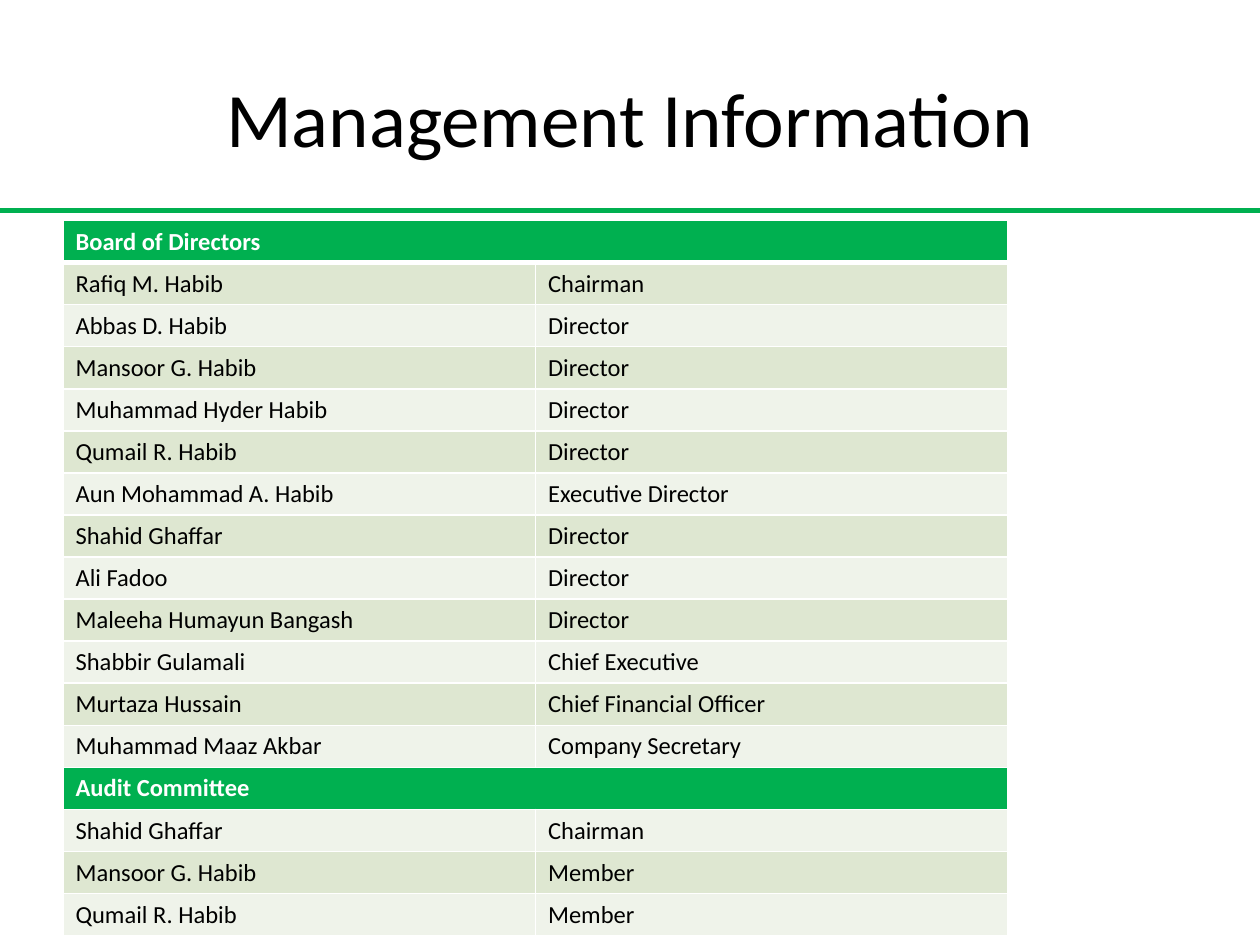
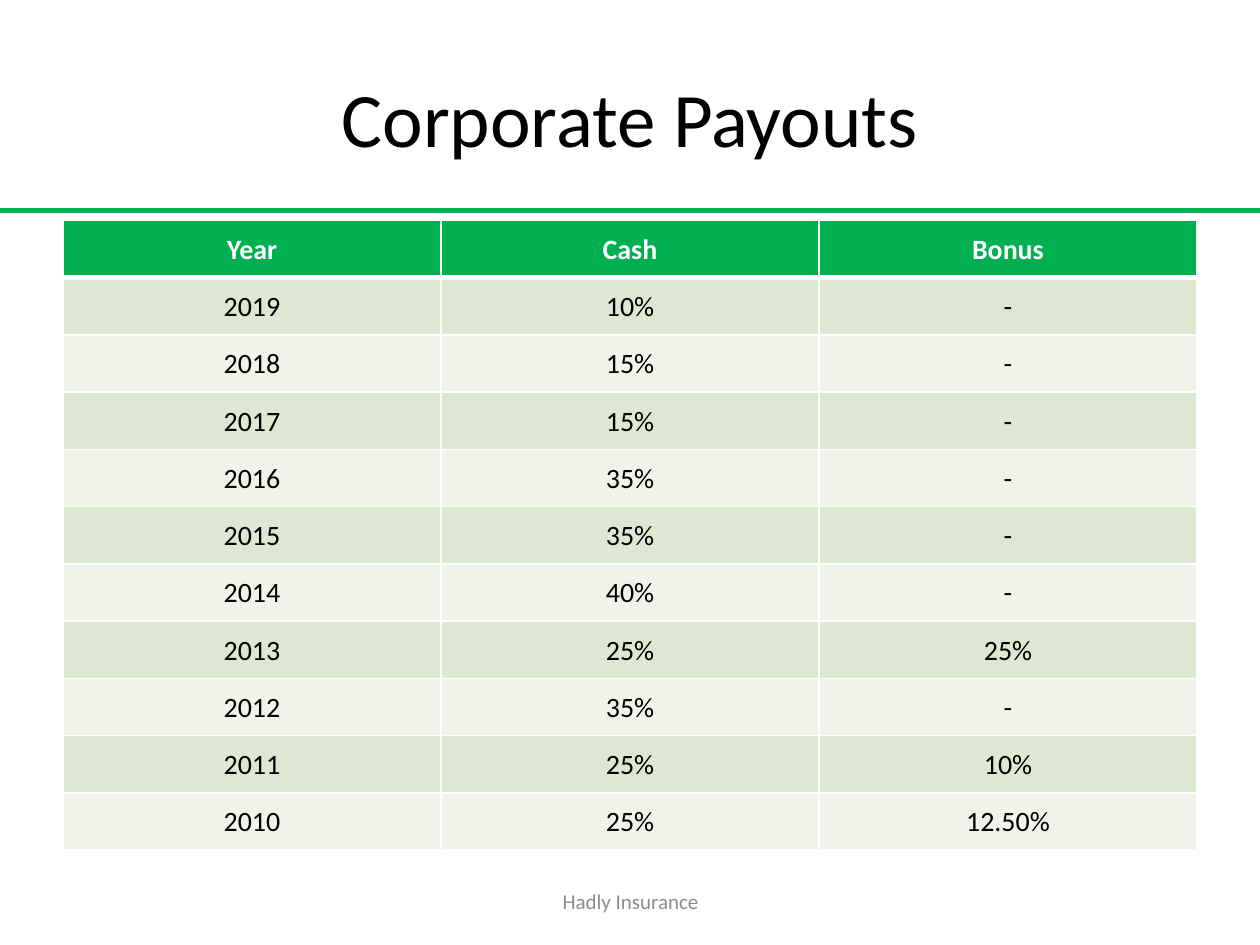
from dataclasses import dataclass
from typing import Optional

from lxml import etree
from pptx import Presentation, util as u
from pptx.dml.color import RGBColor
from pptx.enum import shapes, text
from pptx.oxml import ns

SCALE = u.Inches(1) // 100


@dataclass(frozen=True)
class Theme:
    """Colours, font and type sizes shared by the slides."""
    green: str = "00B050"
    band_dark: str = "DEE7D1"
    band_light: str = "EFF3EA"
    white: str = "FFFFFF"
    black: str = "000000"
    grey: str = "8C8C8C"
    font: str = "Calibri"
    title_size: int = 44
    footer_size: int = 12
    rule_width: int = 3
    border_width: int = 1
    header_border_width: int = 3


@dataclass(frozen=True)
class Box:
    """A rectangle in px, a hundred to the inch."""
    left: int
    top: int
    width: int
    height: int

    def emu(self) -> tuple[int, ...]:
        """Return the rectangle in EMU."""
        return tuple(px(v) for v in (self.left, self.top, self.width, self.height))


@dataclass(frozen=True)
class TableSpec:
    """A banded table; a row with one entry is a heading across all columns."""
    box: Box
    rows: list[tuple[str, ...]]
    size: int
    align: text.PP_ALIGN = text.PP_ALIGN.LEFT
    anchor: text.MSO_ANCHOR = text.MSO_ANCHOR.TOP
    margins: Optional[tuple[int, int, int, int]] = None


@dataclass(frozen=True)
class SlideSpec:
    """The title, table and optional footer of one slide."""
    title: str
    table: TableSpec
    footer: str = ""


THEME = Theme()
PAGE = Box(0, 0, 1000, 750)
TITLE_BOX = Box(50, 30, 900, 125)
FOOTER_BOX = Box(342, 695, 317, 40)
RULE_TOP = 167

MANAGEMENT = [
    ("Board of Directors",),
    ("Rafiq M. Habib", "Chairman"),
    ("Abbas D. Habib", "Director"),
    ("Mansoor G. Habib", "Director"),
    ("Muhammad Hyder Habib", "Director"),
    ("Qumail R. Habib", "Director"),
    ("Aun Mohammad A. Habib", "Executive Director"),
    ("Shahid Ghaffar", "Director"),
    ("Ali Fadoo", "Director"),
    ("Maleeha Humayun Bangash", "Director"),
    ("Shabbir Gulamali", "Chief Executive"),
    ("Murtaza Hussain", "Chief Financial Officer"),
    ("Muhammad Maaz Akbar", "Company Secretary"),
    ("Audit Committee",),
    ("Shahid Ghaffar", "Chairman"),
    ("Mansoor G. Habib", "Member"),
    ("Qumail R. Habib", "Member"),
]
PAYOUTS = [
    ("Year", "Cash", "Bonus"),
    ("2019", "10%", "-"),
    ("2018", "15%", "-"),
    ("2017", "15%", "-"),
    ("2016", "35%", "-"),
    ("2015", "35%", "-"),
    ("2014", "40%", "-"),
    ("2013", "25%", "25%"),
    ("2012", "35%", "-"),
    ("2011", "25%", "10%"),
    ("2010", "25%", "12.50%"),
]
SLIDES = [
    SlideSpec("Management Information",
              TableSpec(Box(50, 175, 750, 567), MANAGEMENT, 14)),
    SlideSpec("Corporate Payouts",
              TableSpec(Box(50, 175, 900, 500), PAYOUTS, 16, text.PP_ALIGN.CENTER,
                        text.MSO_ANCHOR.MIDDLE, (1, 1, 1, 0)),
              "Hadly Insurance"),
]


def px(length: int) -> int:
    """Turn px into EMU."""
    return length * SCALE


def write(frame, content: str, *, size: int, color: str = THEME.black,
          bold: bool = False, align: text.PP_ALIGN = text.PP_ALIGN.CENTER) -> None:
    """Write one formatted paragraph into a text frame."""
    paragraph = frame.paragraphs[0]
    paragraph.alignment = align
    run = paragraph.add_run()
    run.text = content
    run.font.name = THEME.font
    run.font.size = u.Pt(size)
    run.font.bold = bold
    run.font.color.rgb = RGBColor.from_string(color)


def add_label(slide, box: Box, content: str, *, size: int, color: str) -> None:
    """Add a centred text box."""
    frame = slide.shapes.add_textbox(*box.emu()).text_frame
    frame.word_wrap = True
    frame.vertical_anchor = text.MSO_ANCHOR.MIDDLE
    write(frame, content, size=size, color=color)


def add_rule(slide) -> None:
    """Draw the green line below the title."""
    rule = slide.shapes.add_connector(shapes.MSO_CONNECTOR.STRAIGHT, 0, px(RULE_TOP),
                                      px(PAGE.width), px(RULE_TOP))
    rule.line.color.rgb = RGBColor.from_string(THEME.green)
    rule.line.width = u.Pt(THEME.rule_width)
    etree.SubElement(rule._element.spPr, ns.qn("a:effectLst"))


def set_borders(cell, top: int, bottom: int) -> None:
    """Give a cell white borders, placed before its fill."""
    properties = cell._tc.get_or_add_tcPr()
    widths = {"L": THEME.border_width, "R": THEME.border_width, "T": top, "B": bottom}
    for index, (side, width) in enumerate(widths.items()):
        border = etree.Element(ns.qn(f"a:ln{side}"), w=str(u.Pt(width)))
        fill = etree.SubElement(border, ns.qn("a:solidFill"))
        etree.SubElement(fill, ns.qn("a:srgbClr"), val=THEME.white)
        properties.insert(index, border)


def add_table(slide, spec: TableSpec) -> None:
    """Add a table with green headings and two alternating bands."""
    columns = max(len(row) for row in spec.rows)
    table = slide.shapes.add_table(len(spec.rows), columns, *spec.box.emu()).table
    table.first_row = table.horz_banding = False
    for row, entries in enumerate(spec.rows):
        spanning = len(entries) == 1
        heading = spanning or row == 0
        band = THEME.band_dark if row % 2 else THEME.band_light
        top = THEME.header_border_width if row == 1 else THEME.border_width
        bottom = THEME.header_border_width if row == 0 else THEME.border_width
        for column in range(columns):
            cell = table.cell(row, column)
            cell.fill.solid()
            cell.fill.fore_color.rgb = RGBColor.from_string(THEME.green if heading else band)
            cell.vertical_anchor = spec.anchor
            if spec.margins:
                (cell.margin_left, cell.margin_top, cell.margin_right,
                 cell.margin_bottom) = map(px, spec.margins)
            set_borders(cell, top, bottom)
            if column < len(entries):
                write(cell.text_frame, entries[column], size=spec.size, bold=heading,
                      color=THEME.white if heading else THEME.black, align=spec.align)
        if spanning:
            table.cell(row, 0).merge(table.cell(row, columns - 1))


def add_slide(presentation, spec: SlideSpec) -> None:
    """Build one slide from its description."""
    slide = presentation.slides.add_slide(presentation.slide_layouts[6])
    add_rule(slide)
    add_label(slide, TITLE_BOX, spec.title, size=THEME.title_size, color=THEME.black)
    add_table(slide, spec.table)
    if spec.footer:
        add_label(slide, FOOTER_BOX, spec.footer, size=THEME.footer_size, color=THEME.grey)


def main() -> None:
    """Build and save the presentation."""
    presentation = Presentation()
    presentation.slide_width = px(PAGE.width)
    presentation.slide_height = px(PAGE.height)
    for spec in SLIDES:
        add_slide(presentation, spec)
    presentation.save("out.pptx")


if __name__ == "__main__":
    main()
